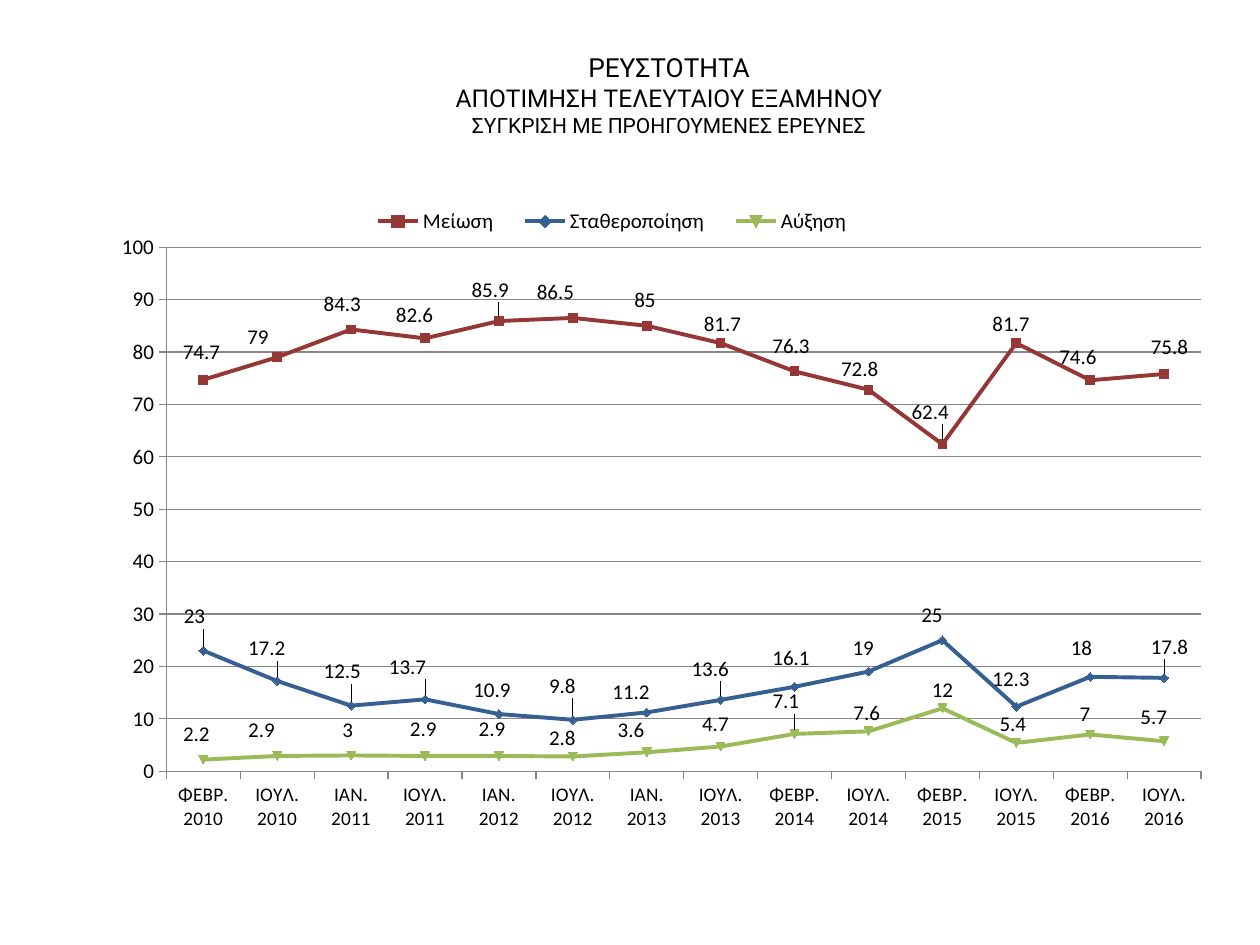
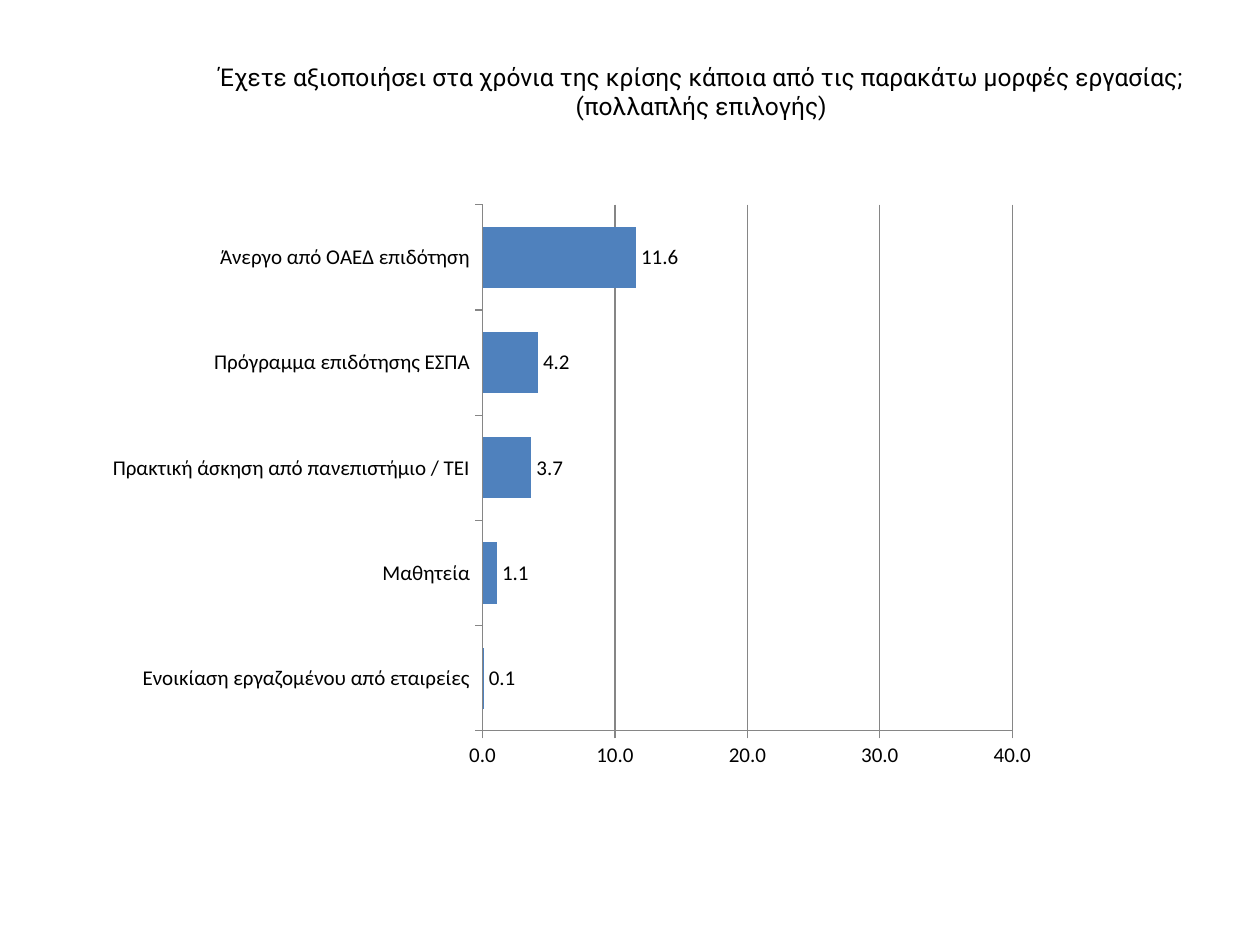
"""Build two survey slides: a liquidity trend line chart and a work-forms bar chart."""
import dataclasses

import lxml.etree
import pptx
import pptx.chart.data
import pptx.dml.color
import pptx.enum.chart
import pptx.enum.text
import pptx.oxml.ns
import pptx.util

Cm, Pt = pptx.util.Cm, pptx.util.Pt
rgb = pptx.dml.color.RGBColor.from_string
xl = pptx.enum.chart
qn = pptx.oxml.ns.qn


@dataclasses.dataclass(frozen=True)
class Theme:
    title_font: str = "Roboto"
    chart_font: str = "Calibri"
    text: str = "000000"
    grid: str = "868686"
    decrease: str = "953735"
    stable: str = "376092"
    increase: str = "9BBB59"
    bar: str = "4F81BD"
    title_large: int = 15
    title_size: int = 14
    title_small: int = 12
    chart_size: int = 12
    category_size: int = 11
    series_line: float = 2.25
    grid_line: float = 0.75


theme = Theme()


def set_layout(parent, index, **settings):
    """Give a chart part a manual layout."""
    for old in parent.findall(qn("c:layout")):
        parent.remove(old)
    layout = lxml.etree.Element(qn("c:layout"))
    manual = lxml.etree.SubElement(layout, qn("c:manualLayout"))
    for tag, value in settings.items():
        lxml.etree.SubElement(manual, qn("c:" + tag)).set("val", str(value))
    parent.insert(index, layout)


prs = pptx.Presentation()
prs.slide_width, prs.slide_height = Cm(25.4), Cm(19.05)

months = ["ΦΕΒΡ. 2010", "ΙΟΥΛ. 2010", "ΙΑΝ. 2011", "ΙΟΥΛ. 2011", "ΙΑΝ. 2012",
          "ΙΟΥΛ. 2012", "ΙΑΝ. 2013", "ΙΟΥΛ. 2013", "ΦΕΒΡ. 2014", "ΙΟΥΛ. 2014",
          "ΦΕΒΡ. 2015", "ΙΟΥΛ. 2015", "ΦΕΒΡ. 2016", "ΙΟΥΛ. 2016"]
trend = pptx.chart.data.CategoryChartData()
trend.categories = months
trend.add_series("Μείωση", [74.7, 79, 84.3, 82.6, 85.9, 86.5, 85,
                            81.7, 76.3, 72.8, 62.4, 81.7, 74.6, 75.8])
trend.add_series("Σταθεροποίηση", [23, 17.2, 12.5, 13.7, 10.9, 9.8, 11.2,
                                   13.6, 16.1, 19, 25, 12.3, 18, 17.8])
trend.add_series("Αύξηση", [2.2, 2.9, 3, 2.9, 2.9, 2.8, 3.6,
                            4.7, 7.1, 7.6, 12, 5.4, 7, 5.7])

work_forms = pptx.chart.data.CategoryChartData(number_format="###0.0")
work_forms.categories = ["Ενοικίαση εργαζομένου από εταιρείες", "Μαθητεία",
                         "Πρακτική άσκηση από πανεπιστήμιο / ΤΕΙ",
                         "Πρόγραμμα επιδότησης ΕΣΠΑ", "Άνεργο από ΟΑΕΔ επιδότηση"]
work_forms.add_series("Series 1", [0.1, 1.1, 3.7, 4.2, 11.6])

slides = [
    dict(title=[("ΡΕΥΣΤΟΤΗΤΑ", theme.title_large),
                ("ΑΠΟΤΙΜΗΣΗ ΤΕΛΕΥΤΑΙΟΥ ΕΞΑΜΗΝΟΥ", theme.title_size),
                ("ΣΥΓΚΡΙΣΗ ΜΕ ΠΡΟΗΓΟΥΜΕΝΕΣ ΕΡΕΥΝΕΣ", theme.title_small)],
         title_box=(3.18, 0.91, 20.62, 1.37), kind=xl.XL_CHART_TYPE.LINE_MARKERS,
         data=trend, chart_box=(1.9, 3.73, 22.7, 13.34), plot=(0.064, 0.094, 0.919, 0.792),
         top=100, category_size=theme.category_size, number_format="General"),
    dict(title=[("Έχετε αξιοποιήσει στα χρόνια της κρίσης κάποια από τις παρακάτω "
                 "μορφές εργασίας;", theme.title_size),
                ("(πολλαπλής επιλογής)", theme.title_size)],
         title_box=(3.18, 1.12, 21.92, 1.6), kind=xl.XL_CHART_TYPE.BAR_CLUSTERED,
         data=work_forms, chart_box=(1.9, 3.89, 19.28, 11.84), plot=(0.406, 0.02, 0.554, 0.896),
         top=40, category_size=theme.chart_size, number_format="###0.0"),
]

charts = []
for page in slides:
    slide = prs.slides.add_slide(prs.slide_layouts[5])
    sp = slide.shapes.title
    sp.left, sp.top, sp.width, sp.height = map(Cm, page["title_box"])
    tf = sp.text_frame
    tf.word_wrap = True
    tf.auto_size = pptx.enum.text.MSO_AUTO_SIZE.NONE
    tf.vertical_anchor = pptx.enum.text.MSO_ANCHOR.TOP
    p = tf.paragraphs[0]
    p.alignment = pptx.enum.text.PP_ALIGN.CENTER
    for i, (line, size) in enumerate(page["title"]):
        if i:
            p.add_line_break()
        r = p.add_run()
        r.text = line
        r.font.name, r.font.size = theme.title_font, Pt(size)
        r.font.color.rgb = rgb(theme.text)

    chart = slide.shapes.add_chart(page["kind"], *map(Cm, page["chart_box"]), page["data"]).chart
    chart.has_title = chart.has_legend = False
    chart.font.name, chart.font.size = theme.chart_font, Pt(theme.chart_size)
    chart.font.color.rgb = rgb(theme.text)
    x, y, w, h = page["plot"]
    set_layout(chart._chartSpace.chart.plotArea, 0, layoutTarget="inner",
               xMode="edge", yMode="edge", x=x, y=y, w=w, h=h)
    chart.plots[0].vary_by_categories = False

    values = chart.value_axis
    values.minimum_scale, values.maximum_scale, values.major_unit = 0, page["top"], 10
    values.tick_labels.number_format = page["number_format"]
    values.tick_labels.number_format_is_linked = False
    values.has_major_gridlines = True
    chart.category_axis.tick_labels.font.size = Pt(page["category_size"])
    for axis in (values, chart.category_axis):
        axis.major_tick_mark = xl.XL_TICK_MARK.OUTSIDE
        axis.minor_tick_mark = xl.XL_TICK_MARK.NONE
    for line in (values.format.line, chart.category_axis.format.line,
                 values.major_gridlines.format.line):
        line.color.rgb, line.width = rgb(theme.grid), Pt(theme.grid_line)
    charts.append(chart)

trend_chart, work_chart = charts

trend_chart.has_legend = True
legend = trend_chart.legend
legend.position = xl.XL_LEGEND_POSITION.RIGHT
legend.include_in_layout = False
legend.font.name, legend.font.size = theme.chart_font, Pt(theme.chart_size)
set_layout(legend._element, 1, xMode="edge", yMode="edge", x=0.23, y=0.02, w=0.46, h=0.07)

label_nudges = [
    [(-1, -3), (-11, 1), (-5, -2), (-6, -1), (-5, -5), (-10, -2), (-1, -2),
     (1, 2), (-2, -2), (-5, 1), (-7, -6), (-3, 2), (-7, -1), (3, -3)],
    [(-5, -7), (-6, -6), (-5, -7), (-10, -6), (-4, -1), (-6, -7), (-9, 1),
     (-6, -5), (-2, -4), (-3, -1), (-6, -2), (-3, -3), (-5, -4), (3, -5)],
    [(-4, -2), (-9, -2), (-2, -2), (-1, -3), (-4, -3), (-6, 2), (-9, 0),
     (-3, 0), (-5, -6), (-1, 2), (0, 2), (-2, 2), (-3, 1), (-6, -1)],
]
_, _, chart_width, chart_height = map(Cm, slides[0]["chart_box"])
colors = (theme.decrease, theme.stable, theme.increase)
for series, color, nudges in zip(trend_chart.plots[0].series, colors, label_nudges):
    series.smooth = False
    series.format.line.color.rgb = rgb(color)
    series.format.line.width = Pt(theme.series_line)
    marker = series.marker
    marker.style, marker.size = xl.XL_MARKER_STYLE.AUTOMATIC, 5
    marker.format.fill.solid()
    marker.format.fill.fore_color.rgb = rgb(color)
    marker.format.line.color.rgb = rgb(color)
    series.data_labels.show_value = True
    for i in range(len(nudges)):
        label = series.points[i].data_label
        label.font.name, label.font.size = theme.chart_font, Pt(theme.chart_size)
        label.position = xl.XL_LABEL_POSITION.ABOVE
    for dlbl, (dx, dy) in zip(series._element.xpath(".//c:dLbl"), nudges):
        set_layout(dlbl, 1, x=round(Pt(dx) / chart_width, 4), y=round(Pt(dy) / chart_height, 4))

plot = work_chart.plots[0]
plot.gap_width = 72
fill = plot.series[0].format.fill
fill.solid()
fill.fore_color.rgb = rgb(theme.bar)
plot.has_data_labels = True
labels = plot.data_labels
labels.show_value = True
labels.number_format, labels.number_format_is_linked = "###0.0", False
labels.position = xl.XL_LABEL_POSITION.OUTSIDE_END
labels.font.name, labels.font.size = theme.chart_font, Pt(theme.chart_size)

prs.save("out.pptx")
